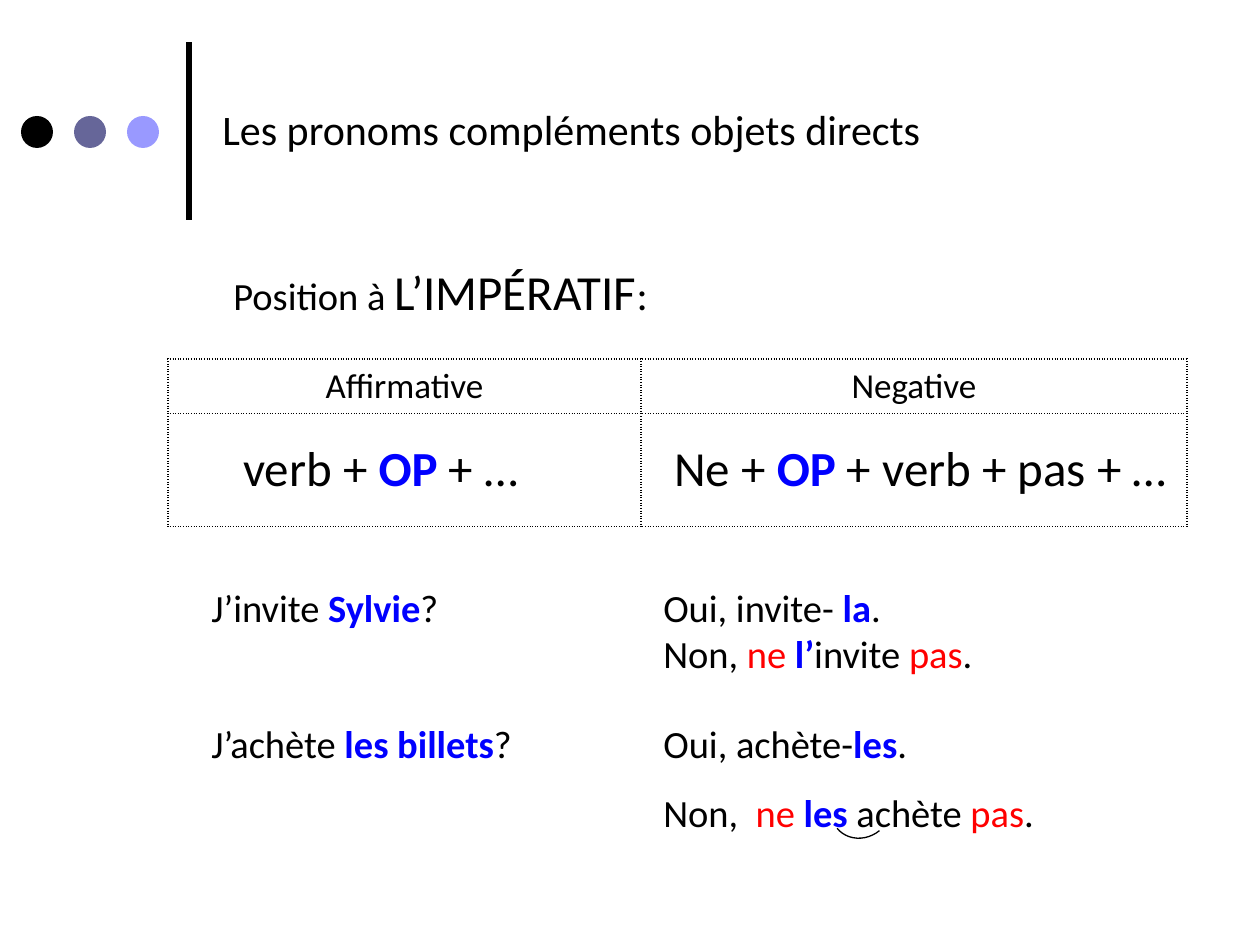
from lxml import etree
from pptx import Presentation
from pptx.dml.color import RGBColor
from pptx.enum import shapes, text
from pptx.oxml import ns
from pptx.util import Emu, Pt

PX = 914400 / 126
FONT = "Calibri"
COLORS = {"ink": "000000", "object": "0000FF", "negation": "FF0000",
          "slate": "666699", "lilac": "9999FF"}


def px(length):
    """Turn px into EMU."""
    return Emu(round(length * PX))


def color(name):
    """Look up a named colour."""
    return RGBColor.from_string(COLORS[name])


def add_runs(paragraph, runs, size):
    """Add (text, colour name, optional size) runs; object pronouns are bold."""
    for words, name, *own_size in runs:
        run = paragraph.add_run()
        run.text = words
        run.font.name = FONT
        run.font.size = Pt(own_size[0] if own_size else size)
        run.font.bold = name == "object"
        run.font.color.rgb = color(name)


def add_text(parent, box, lines, size, spacing=None):
    """Place a text box with one paragraph per line of runs."""
    frame = parent.add_textbox(*map(px, box)).text_frame
    frame.word_wrap = True
    frame.auto_size = text.MSO_AUTO_SIZE.SHAPE_TO_FIT_TEXT
    for index, runs in enumerate(lines):
        paragraph = frame.paragraphs[0] if index == 0 else frame.add_paragraph()
        if index and spacing:
            paragraph.line_spacing = spacing
        add_runs(paragraph, runs, size)


def add_header(slide, box, title):
    """Place the three dots, the upright rule and the title."""
    left, top, width, height = box
    for index, name in enumerate(("ink", "slate", "lilac")):
        dot = slide.shapes.add_shape(
            shapes.MSO_SHAPE.OVAL, px(left + 53 * index), px(top + 74), px(32), px(32))
        dot.shadow.inherit = False
        dot.fill.solid()
        dot.fill.fore_color.rgb = color(name)
        dot.line.fill.background()
    rule = slide.shapes.add_connector(
        shapes.MSO_CONNECTOR.STRAIGHT, px(left + 168), px(top + height), px(left + 168), px(top))
    rule.line.color.rgb = color("ink")
    rule.line.width = Pt(3)
    etree.SubElement(rule._element.spPr, ns.qn("a:effectLst"))
    add_text(slide.shapes, (left + 189, top + 55, width - 189, 64), [[(title, "ink")]], 24)


def add_borders(cell):
    """Give a cell dotted borders on all sides."""
    properties = cell._tc.get_or_add_tcPr()
    for index, side in enumerate(("lnL", "lnR", "lnT", "lnB")):
        line = etree.Element(ns.qn(f"a:{side}"), w=str(Pt(1)))
        fill = etree.SubElement(line, ns.qn("a:solidFill"))
        etree.SubElement(fill, ns.qn("a:srgbClr"), val=COLORS["ink"])
        etree.SubElement(line, ns.qn("a:prstDash"), val="sysDot")
        properties.insert(index, line)


def add_pattern_table(slide, box, headings, patterns):
    """Place the table of word orders with a pattern over each lower cell."""
    left, top, width, height = box
    table = slide.shapes.add_table(2, 2, *map(px, box)).table
    table.first_row = table.horz_banding = False
    for column, size in zip(table.columns, (473, width - 473)):
        column.width = px(size)
    for row, size in zip(table.rows, (54, height - 54)):
        row.height = px(size)
    for cell in table.iter_cells():
        cell.fill.background()
        add_borders(cell)
    for cell, heading in zip(table.rows[0].cells, headings):
        paragraph = cell.text_frame.paragraphs[0]
        paragraph.alignment = text.PP_ALIGN.CENTER
        add_runs(paragraph, [(heading, "ink")], 20)
    for (offset, size), runs in zip(((63, 347), (494, 536)), patterns):
        add_text(slide.shapes, (left + offset, top + 72, size, 72), [runs], 28)


def add_example(slide, box, question, answers, spacing=None, liaison=None):
    """Place a question with its answers, and a liaison arc if one is given."""
    left, top, width, height = box
    add_text(slide.shapes, (left, top, 431, 59), [question], 22)
    parent = slide.shapes.add_group_shape().shapes if liaison else slide.shapes
    add_text(parent, (left + 452, top, width - 452, height), answers, 22, spacing)
    if liaison:
        across, down = liaison
        arc = parent.add_shape(
            shapes.MSO_SHAPE.ARC, px(left + across), px(top + down), px(63), px(57))
        arc.rotation = 141.1
        arc.shadow.inherit = False
        arc.fill.background()
        arc.line.color.rgb = color("ink")
        arc.line.width = Pt(0.75)


def main():
    """Build and save the slide."""
    presentation = Presentation()
    presentation.slide_width, presentation.slide_height = px(1260), px(945)
    slide = presentation.slides.add_slide(presentation.slide_layouts[6])
    add_header(slide, (21, 42, 1134, 178), "Les pronoms compléments objets directs")
    add_text(slide.shapes, (221, 255, 599, 72), [
        [("Position à ", "ink", 22), ("L’IMPÉRATIF", "ink", 28), (":", "ink", 24)]], 22)
    add_pattern_table(slide, (168, 359, 1019, 167), ("Affirmative", "Negative"), [
        [("verb + ", "ink"), ("OP ", "object"), ("+ …", "ink")],
        [("Ne + ", "ink"), ("OP", "object"), (" + verb + pas + …", "ink")]])
    add_example(
        slide, (199, 578, 956, 106),
        [("J’invite ", "ink"), ("Sylvie", "object"), ("?", "ink")],
        [[("Oui, invite- ", "ink"), ("la", "object"), (".", "ink")],
         [("Non, ", "ink"), ("ne ", "negation"), ("l’", "object"),
          ("invite ", "ink"), ("pas", "negation"), (".", "ink")]])
    add_example(
        slide, (199, 714, 988, 130),
        [("J’achète ", "ink"), ("les billets", "object"), ("?", "ink")],
        [[("Oui, achète-", "ink"), ("les", "object"), (".", "ink")],
         [("Non,  ", "ink"), ("ne ", "negation"), ("les ", "object"),
          ("achète ", "ink"), ("pas", "negation"), (".", "ink")]],
        spacing=1.5, liaison=(631, 66))
    presentation.save("out.pptx")


if __name__ == "__main__":
    main()
